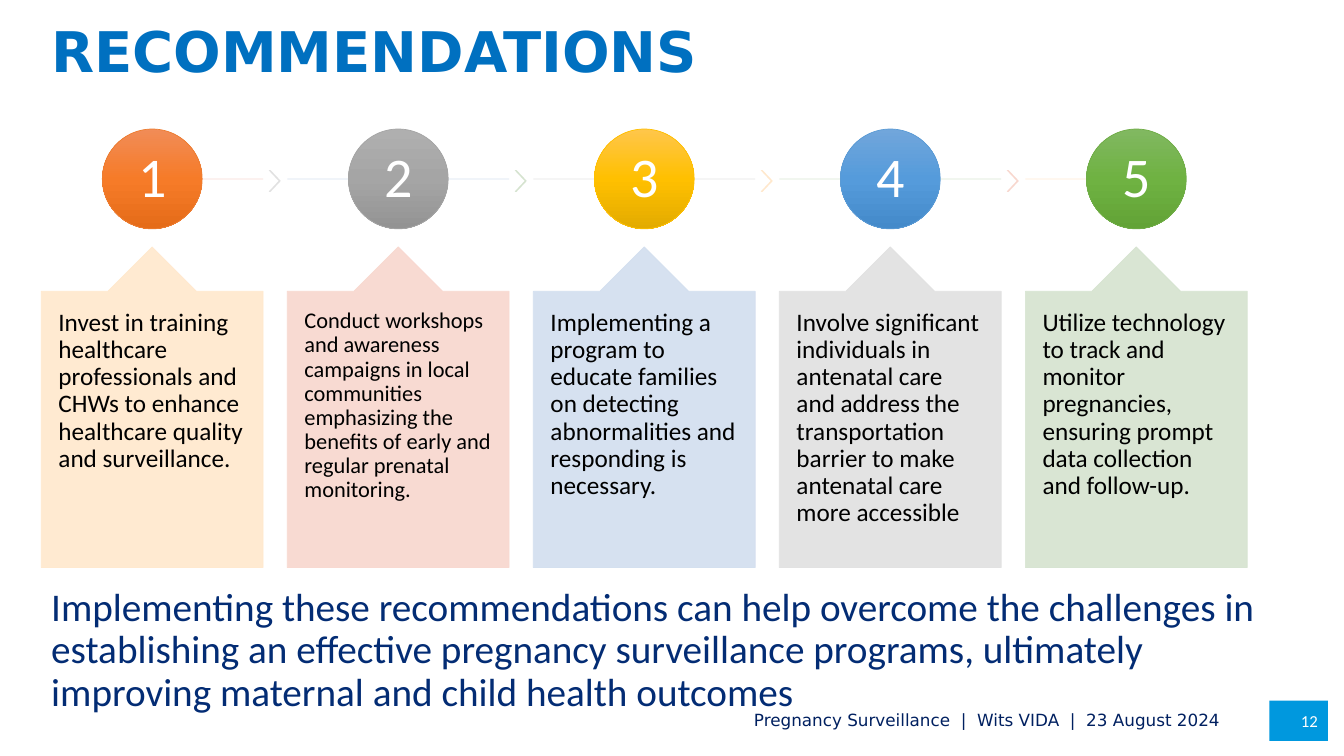
import pptx
import pptx.util
import pptx.dml.color
import pptx.enum.shapes
import pptx.enum.text
import pptx.oxml
import pptx.oxml.ns
import lxml.etree

Inches = pptx.util.Inches
SHAPES = pptx.enum.shapes.MSO_SHAPE
ALIGN = pptx.enum.text.PP_ALIGN
ANCHOR = pptx.enum.text.MSO_ANCHOR
NO_AUTOFIT = pptx.enum.text.MSO_AUTO_SIZE.NONE
qn = pptx.oxml.ns.qn

PEACH, PINK, BLUE, GREY, GREEN = "FFE8CC", "F8D7CE", "D2DEEF", "E1E1E1", "D5E3CF"

# Recommendation, text size, callout colour, track colour, chevron colour, circle line, circle gradient
STEPS = [
    ("Invest in training healthcare professionals and CHWs to enhance healthcare quality and surveillance.",
     18, PEACH, PINK, GREY, "ED7D31", ("F18C57", "F67B28", "E56C19")),
    ("Conduct workshops and awareness campaigns in local communities emphasizing the benefits of early "
     "and regular prenatal monitoring.",
     16, PINK, BLUE, GREEN, "A5A5A5", ("AFAFAF", "A5A5A5", "939393")),
    ("Implementing a program to educate families on detecting abnormalities and responding is necessary.",
     18, BLUE, GREY, PEACH, "FFC000", ("FFC64B", "FFC000", "E3AB00")),
    ("Involve significant individuals in antenatal care and address the transportation barrier to make "
     "antenatal care more accessible",
     18, GREY, GREEN, PINK, "5B9BD5", ("71A6DB", "559BDB", "448ACA")),
    ("Utilize technology to track and monitor pregnancies, ensuring prompt data collection and follow-up.",
     18, GREEN, PEACH, None, "70AD47", ("81B861", "6FB242", "62A336")),
]


def paint(color_format, color, alpha=None):
    color_format.rgb = pptx.dml.color.RGBColor.from_string(color)
    if alpha is not None:
        rgb = color_format._xFill.find(qn("a:srgbClr"))
        lxml.etree.SubElement(rgb, qn("a:alpha")).set("val", str(alpha * 1000))


def write(shape, text, size, color, font="Calibri", bold=False, align=ALIGN.LEFT,
          anchor=ANCHOR.TOP, insets=(0.1, 0.05), spacing=0.9):
    frame = shape.text_frame
    frame.word_wrap = True
    frame.auto_size = NO_AUTOFIT
    frame.vertical_anchor = anchor
    frame.margin_left = frame.margin_right = Inches(insets[0])
    frame.margin_top = frame.margin_bottom = Inches(insets[1])
    paragraph = frame.paragraphs[0]
    paragraph.alignment = align
    paragraph.line_spacing = spacing
    paragraph.space_before = pptx.util.Pt(0)
    run = paragraph.add_run()
    run.text = text
    run.font.size = pptx.util.Pt(size)
    run.font.name = font
    run.font.bold = bold
    paint(run.font.color, color)


def add_text(slide, box, text, **formatting):
    write(slide.shapes.add_textbox(*map(Inches, box)), text, **formatting)


def add_shape(slide, kind, box, fill, line=None, alpha=None):
    shape = slide.shapes.add_shape(kind, *map(Inches, box))
    shape.shadow.inherit = False
    shape.fill.solid()
    paint(shape.fill.fore_color, fill, alpha)
    if line:
        paint(shape.line.color, line, alpha)
        shape.line.width = pptx.util.Pt(0.5)
    else:
        shape.line.fill.background()
    return shape


def shade_down(shape, colors):
    """Replace the solid fill with a top-to-bottom gradient."""
    stops = "".join(f'<a:gs pos="{i * 50000}"><a:srgbClr val="{color}"/></a:gs>'
                    for i, color in enumerate(colors))
    gradient = pptx.oxml.parse_xml(
        f'<a:gradFill {pptx.oxml.ns.nsdecls("a")} rotWithShape="1"><a:gsLst>{stops}</a:gsLst>'
        '<a:lin ang="5400000" scaled="0"/></a:gradFill>')
    properties = shape._element.spPr
    properties.replace(properties.find(qn("a:solidFill")), gradient)


def add_track(slide, start, end, y, color):
    track = slide.shapes.add_connector(pptx.enum.shapes.MSO_CONNECTOR.STRAIGHT,
                                       Inches(start), Inches(y), Inches(end), Inches(y))
    paint(track.line.color, color, 90)
    track.line.width = pptx.util.Pt(0.5)
    lxml.etree.SubElement(track._element.spPr, qn("a:effectLst"))


def add_step(slide, box, number, step, first, last):
    left, top, width, height = box
    text, size, callout_color, track_color, chevron_color, rim_color, shades = step
    diameter, callout_offset = 0.99, 1.17
    center, track_y = left + width / 2, top + diameter / 2

    # Track through the circle, ending in a chevron
    add_track(slide, center if first else left, center if last else left + width, track_y, track_color)
    if chevron_color:
        chevron = add_shape(slide, SHAPES.CHEVRON, (left + width + 0.06, top + 0.41, 0.11, 0.21),
                            chevron_color, chevron_color, 90)
        chevron.adjustments[0] = 0.9

    # Numbered circle
    circle = add_shape(slide, SHAPES.OVAL, (center - diameter / 2, top, diameter, diameter),
                       shades[1], rim_color)
    shade_down(circle, shades)
    write(circle, str(number), 40, "FFFFFF", align=ALIGN.CENTER, anchor=ANCHOR.MIDDLE, insets=(0.04, 0.04))

    # Callout with the recommendation
    callout = add_shape(slide, SHAPES.UP_ARROW_CALLOUT,
                        (left, top + callout_offset, width, height - callout_offset),
                        callout_color, callout_color, 90)
    for i, value in enumerate((0.5, 0.2, 0.2, 1)):
        callout.adjustments[i] = value
    write(callout, text, size, "000000", insets=(0.17, 0.18))


def add_steps(slide, box):
    left, top, width, height = box
    step_width = 2.2
    pitch = (width - step_width) / (len(STEPS) - 1)
    for i, step in enumerate(STEPS):
        add_step(slide, (left + i * pitch, top, step_width, height), i + 1, step,
                 first=i == 0, last=i == len(STEPS) - 1)


def add_title(slide, box):
    title = slide.shapes.title
    title.left, title.top, title.width, title.height = map(Inches, box)
    write(title, "RECOMMENDATIONS", 40, "0070C0", font="DejaVu Sans", bold=True, anchor=ANCHOR.MIDDLE)


def add_footer(slide, box):
    left, top, width, height = box
    number_width = 0.58
    number_left = left + width - number_width
    add_text(slide, (left, top, number_left - left - 0.08, height),
             "Pregnancy Surveillance  |  Wits VIDA  |  23 August 2024",
             size=12, color="002060", font="DejaVu Sans", anchor=ANCHOR.MIDDLE)
    page = add_shape(slide, SHAPES.RECTANGLE, (number_left, top, number_width, height), "0098DE")
    write(page, "12", 12, "FFFFFF", align=ALIGN.RIGHT, anchor=ANCHOR.MIDDLE, spacing=1.0)


def main():
    deck = pptx.Presentation()
    deck.slide_width, deck.slide_height = Inches(13.33), Inches(7.5)
    slide = deck.slides.add_slide(deck.slide_layouts[5])
    add_title(slide, (0.41, -0.05, 11.5, 1.18))
    add_footer(slide, (7.38, 6.95, 5.79, 0.4))
    add_steps(slide, (0.41, 1.28, 11.96, 4.35))
    # Closing statement
    add_text(slide, (0.41, 5.78, 12.59, 1.37),
             "Implementing these recommendations can help overcome the challenges in establishing an "
             "effective pregnancy surveillance programs, ultimately improving maternal and child health "
             "outcomes", size=28, color="032C74")
    deck.save("out.pptx")


if __name__ == "__main__":
    main()
